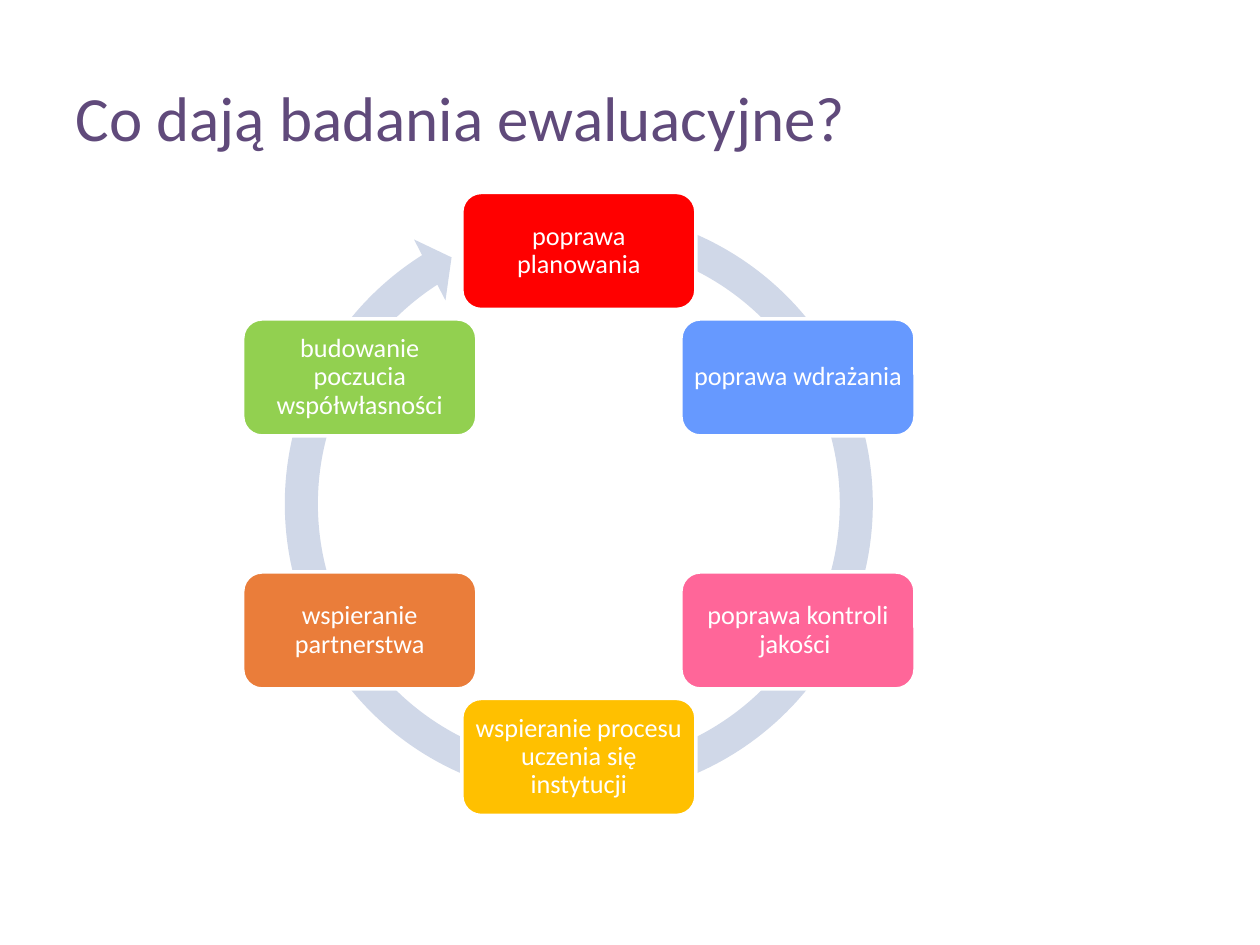
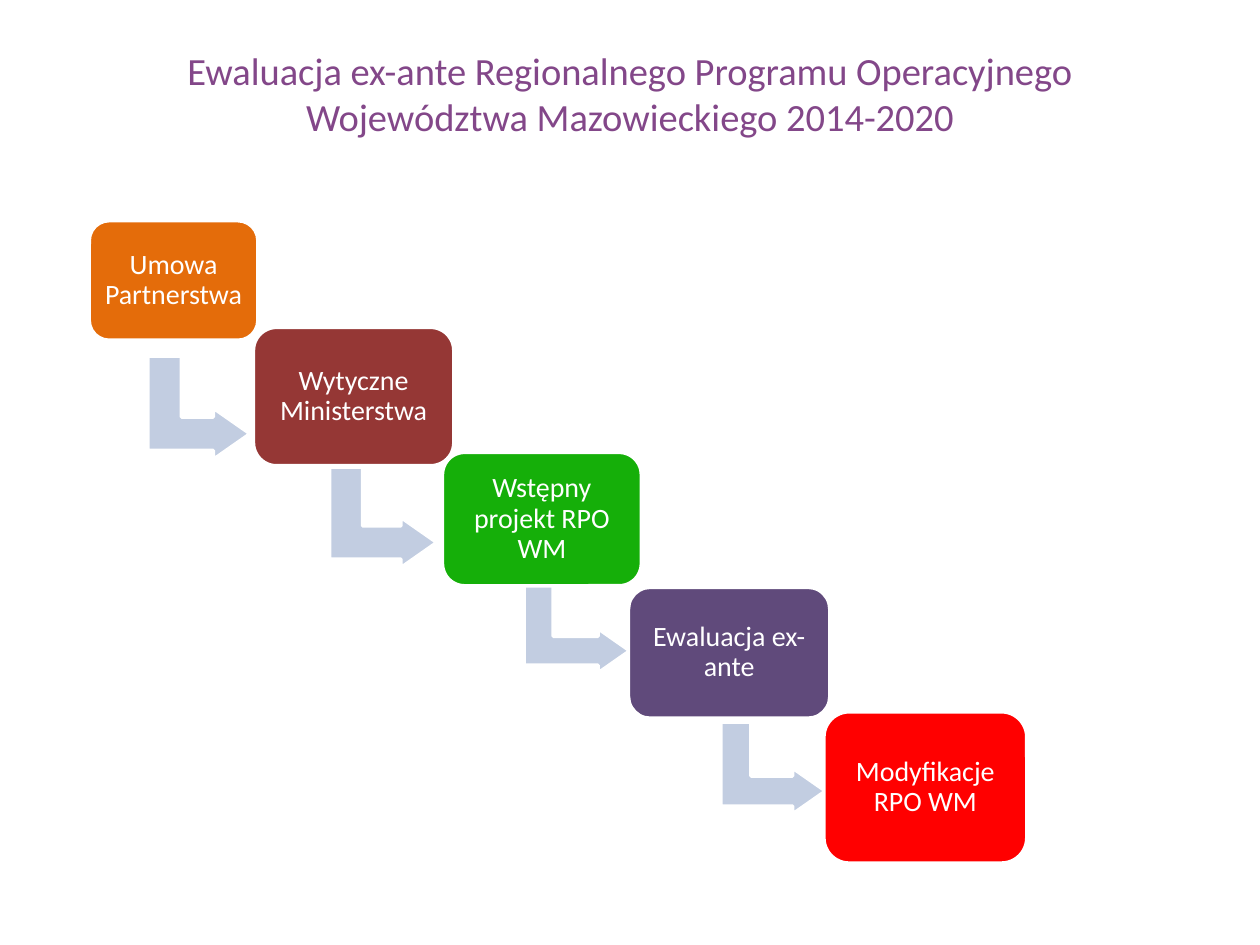
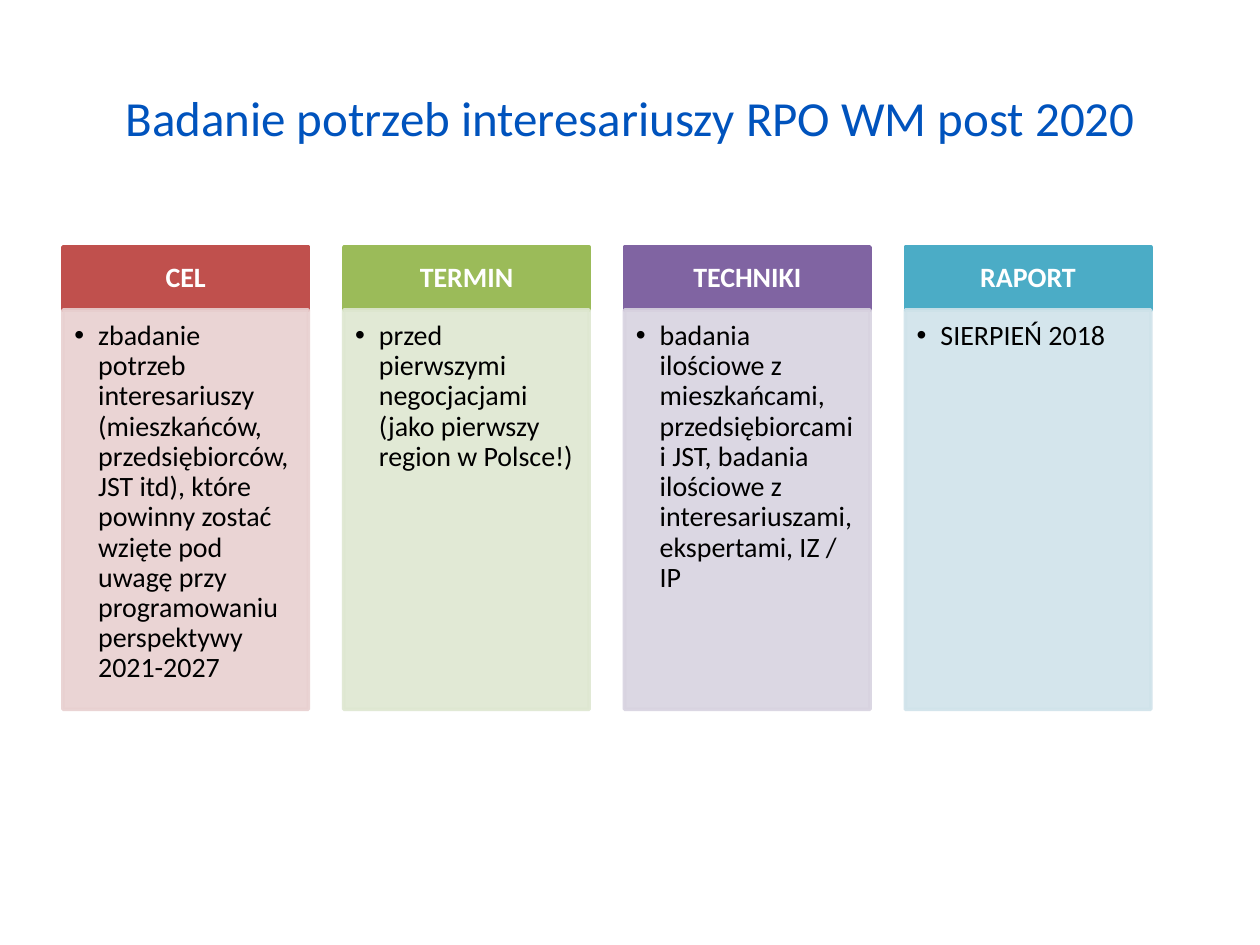
import math
from dataclasses import dataclass
from typing import Optional, Sequence

import pptx
import pptx.dml.color
import pptx.enum.shapes
import pptx.enum.text
import pptx.oxml
import pptx.oxml.ns
import pptx.presentation
import pptx.shapes.autoshape
import pptx.slide
import pptx.util

Cm = pptx.util.Cm
Pt = pptx.util.Pt
Shapes = pptx.enum.shapes.MSO_SHAPE
Align = pptx.enum.text.PP_ALIGN
Anchor = pptx.enum.text.MSO_ANCHOR

FONT = "Calibri"
COLORS = {
    "white": "FFFFFF", "black": "000000",
    "purple": "604A7B", "plum": "834789", "blue": "0053BD",
    "red": "FF0000", "sky": "6699FF", "pink": "FF6699",
    "gold": "FFC000", "orange": "EA7D3A", "lime": "92D050",
    "rust": "E46C0A", "maroon": "953735", "green": "15AF09",
    "ring": "D0D8E8", "arrow": "C2CDE1",
    "brick": "C0504D", "brick_tint": "E8D0D0",
    "olive": "9BBB59", "olive_tint": "DEE7D1",
    "violet": "8064A2", "violet_tint": "D8D3E0",
    "teal": "4BACC6", "teal_tint": "D0E3EA",
}


@dataclass(frozen=True)
class Frame:
    """Left, top, width and height in centimetres."""
    left: float
    top: float
    width: float
    height: float


@dataclass(frozen=True)
class Label:
    text: str
    size: float
    insets: Sequence[float]  # left, top, right, bottom in centimetres
    color: str = "white"
    bold: bool = False
    bullet: bool = False


@dataclass(frozen=True)
class Step:
    text: str
    color: str
    box: Frame
    arrow: Optional[Frame] = None  # arrow to the next step, before rotation


@dataclass(frozen=True)
class Column:
    heading: str
    text: str
    color: str


# Shared drawing
def rgb(name: str) -> pptx.dml.color.RGBColor:
    return pptx.dml.color.RGBColor.from_string(COLORS[name])


def add_titled_page(deck: pptx.presentation.Presentation, text: str, size: float,
                    color: str, align: Align = Align.CENTER,
                    height: float = 3.18) -> pptx.slide.Slide:
    page = deck.slides.add_slide(deck.slide_layouts[5])
    title = page.shapes.title
    title.left, title.top = Cm(1.27), Cm(0.76)
    title.width, title.height = Cm(22.86), Cm(height)
    frame = title.text_frame
    frame.text = text
    frame.auto_size = pptx.enum.text.MSO_AUTO_SIZE.NONE
    frame.vertical_anchor = Anchor.MIDDLE
    para = frame.paragraphs[0]
    para.alignment = align
    para.font.name, para.font.size = FONT, Pt(size)
    para.font.color.rgb = rgb(color)
    return page


def add_figure(page: pptx.slide.Slide, kind: Shapes, frame: Frame, fill: str,
               line: Optional[str] = "white",
               adjustments: Sequence[float] = ()) -> pptx.shapes.autoshape.Shape:
    figure = page.shapes.add_shape(kind, Cm(frame.left), Cm(frame.top),
                                   Cm(frame.width), Cm(frame.height))
    figure.shadow.inherit = False
    figure.fill.solid()
    figure.fill.fore_color.rgb = rgb(fill)
    if line:
        figure.line.color.rgb = rgb(line)
        figure.line.width = Pt(2)
    else:
        figure.line.fill.background()
    for index, value in enumerate(adjustments):
        figure.adjustments[index] = value
    return figure


def write_label(figure: pptx.shapes.autoshape.Shape, label: Label) -> None:
    frame = figure.text_frame
    frame.word_wrap = True
    frame.vertical_anchor = Anchor.TOP if label.bullet else Anchor.MIDDLE
    (frame.margin_left, frame.margin_top,
     frame.margin_right, frame.margin_bottom) = map(Cm, label.insets)
    frame.text = label.text
    para = frame.paragraphs[0]
    para.alignment = Align.LEFT if label.bullet else Align.CENTER
    para.line_spacing = 0.9
    if label.bullet:
        add_bullet(para)
    para.font.name, para.font.size = FONT, Pt(label.size)
    para.font.bold = label.bold
    para.font.color.rgb = rgb(label.color)


def add_bullet(para) -> None:
    properties = para._p.get_or_add_pPr()
    properties.set("marL", str(Cm(0.48)))
    properties.set("indent", str(-Cm(0.48)))
    namespace = pptx.oxml.ns.nsdecls("a")
    for element in ('<a:buFont {} typeface="Arial"/>', '<a:buChar {} char="•"/>'):
        properties.append(pptx.oxml.parse_xml(element.format(namespace)))


def set_opacity(figure: pptx.shapes.autoshape.Shape, percent: int) -> None:
    """Apply the opacity to both the fill and the line."""
    for color in figure._element.spPr.iter(pptx.oxml.ns.qn("a:srgbClr")):
        color.append(pptx.oxml.parse_xml(
            f'<a:alpha {pptx.oxml.ns.nsdecls("a")} val="{percent * 1000}"/>'))


# Slide 1: cycle of benefits, clockwise from the top
BENEFITS = [
    ("poprawa planowania", "red"),
    ("poprawa wdrażania", "sky"),
    ("poprawa kontroli jakości ", "pink"),
    ("wspieranie procesu uczenia się instytucji", "gold"),
    ("wspieranie partnerstwa", "orange"),
    ("budowanie poczucia współwłasności", "lime"),
]


def build_benefits(deck: pptx.presentation.Presentation) -> None:
    page = add_titled_page(deck, "Co dają badania ewaluacyjne?", 36, "purple", Align.LEFT)
    center_x, center_y, radius = 11.67, 10.16, 5.1
    width, height, ring = 4.72, 2.36, 12.57
    add_figure(page, Shapes.CIRCULAR_ARROW,
               Frame(center_x - ring / 2, center_y - ring / 2, ring, ring),
               "ring", None, (0.053, 3.126, 142.497, 171.144, 0.055))
    for index, (text, color) in enumerate(BENEFITS):
        angle = math.tau * index / len(BENEFITS)
        frame = Frame(center_x + radius * math.sin(angle) - width / 2,
                      center_y - radius * math.cos(angle) - height / 2, width, height)
        box = add_figure(page, Shapes.ROUNDED_RECTANGLE, frame, color)
        write_label(box, Label(text, 15, (0.15,) * 4))


# Slide 2: staircase of steps
STEPS = [
    Step("Umowa Partnerstwa", "rust",
         Frame(1.8, 4.45, 3.4, 2.41), Frame(2.97, 7.19, 2.08, 2.06)),
    Step("Wytyczne Ministerstwa", "maroon",
         Frame(5.11, 6.6, 4.04, 2.79), Frame(6.71, 9.35, 2.03, 2.16)),
    Step("Wstępny projekt RPO WM", "green",
         Frame(8.92, 9.12, 4.01, 2.69), Frame(10.74, 11.61, 1.78, 2.13)),
    Step("Ewaluacja ex-ante", "purple",
         Frame(12.67, 11.84, 4.06, 2.64), Frame(14.66, 14.43, 1.85, 2.11)),
    Step("Modyfikacje RPO WM", "red", Frame(16.61, 14.35, 4.09, 3.05)),
]


def build_steps(deck: pptx.presentation.Presentation) -> None:
    page = add_titled_page(
        deck, "Ewaluacja ex-ante Regionalnego Programu Operacyjnego "
        "Województwa Mazowieckiego 2014-2020", 22, "plum", height=2.24)
    for step in STEPS:
        if step.arrow:
            arrow = add_figure(page, Shapes.BENT_UP_ARROW, step.arrow, "arrow",
                               adjustments=(0.328, 0.25, 0.358))
            arrow.rotation = 90
    for step in STEPS:
        box = add_figure(page, Shapes.ROUNDED_RECTANGLE, step.box, step.color)
        write_label(box, Label(step.text, 16, (0.18,) * 4))


# Slide 3: columns with a heading and a tinted body
COLUMNS = [
    Column("CEL", "zbadanie potrzeb interesariuszy (mieszkańców, przedsiębiorców, "
           "JST itd), które powinny zostać wzięte pod uwagę przy programowaniu "
           "perspektywy 2021-2027", "brick"),
    Column("TERMIN", "przed pierwszymi negocjacjami (jako pierwszy region w Polsce!)",
           "olive"),
    Column("TECHNIKI", "badania ilościowe z mieszkańcami, przedsiębiorcami i JST, "
           "badania ilościowe z interesariuszami, ekspertami, IZ / IP", "violet"),
    Column("RAPORT", "SIERPIEŃ 2018", "teal"),
]


def build_columns(deck: pptx.presentation.Presentation) -> None:
    page = add_titled_page(deck, "Badanie potrzeb interesariuszy RPO WM post 2020",
                           28, "blue")
    top, width, pitch, heading_height, body_height = 4.98, 4.95, 5.66, 1.27, 8.05
    for index, column in enumerate(COLUMNS):
        left = 1.27 + index * pitch
        heading = add_figure(page, Shapes.RECTANGLE,
                             Frame(left, top, width, heading_height),
                             column.color, column.color)
        write_label(heading, Label(column.heading, 16, (0.3, 0.18, 0.3, 0.18), bold=True))
        tint = f"{column.color}_tint"
        body = add_figure(page, Shapes.RECTANGLE,
                          Frame(left, top + heading_height, width, body_height), tint, tint)
        set_opacity(body, 90)
        write_label(body, Label(column.text, 16, (0.23, 0.23, 0.3, 0.36),
                                color="black", bullet=True))


def main() -> None:
    deck = pptx.Presentation()
    deck.slide_width, deck.slide_height = Cm(25.4), Cm(19.05)
    build_benefits(deck)
    build_steps(deck)
    build_columns(deck)
    deck.save("out.pptx")


if __name__ == "__main__":
    main()
